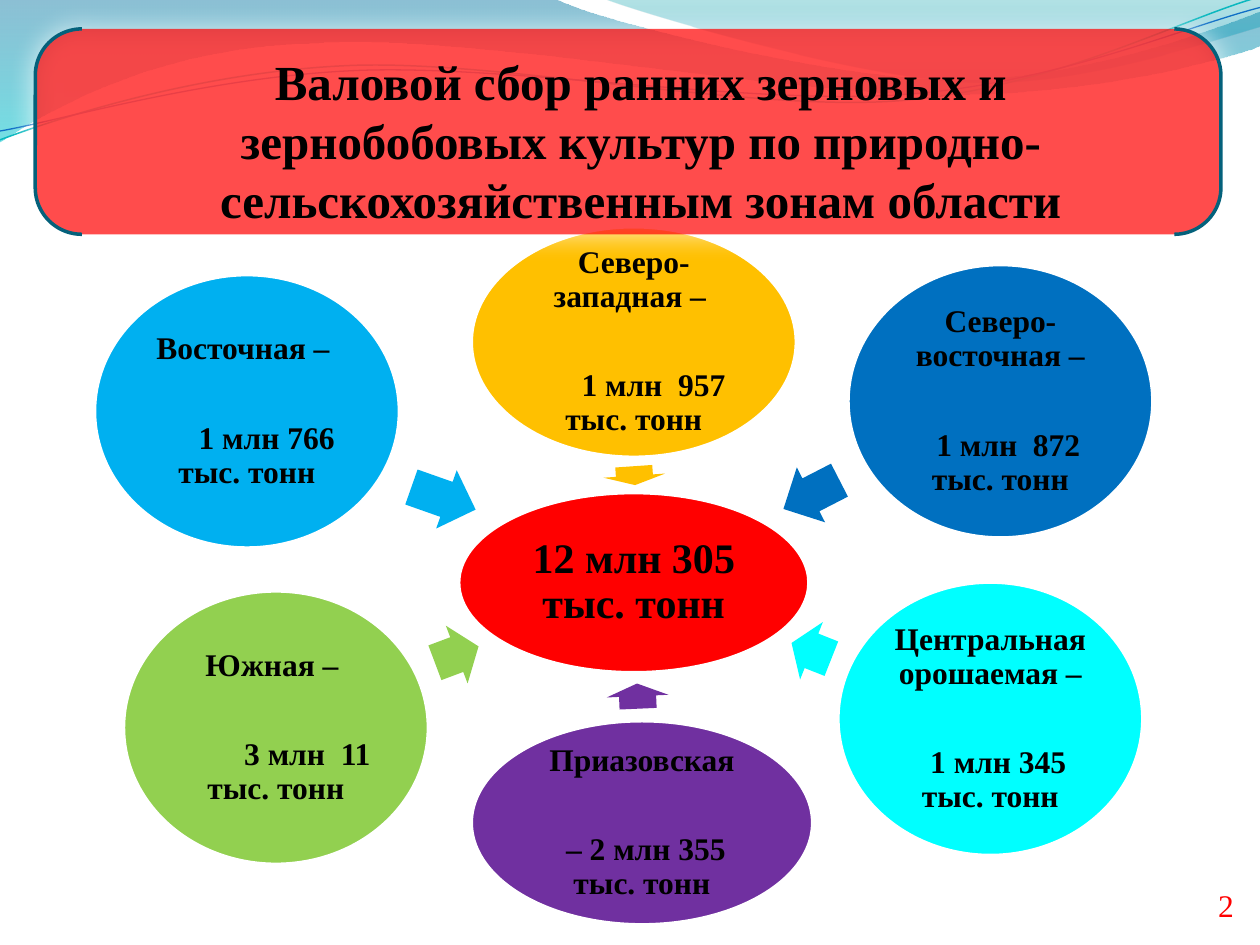
"""Build the slide on gross grain harvest by natural farming zone."""
from dataclasses import dataclass
from math import cos, radians, sin

from lxml.etree import SubElement
from pptx import Presentation
from pptx.dml.color import RGBColor
from pptx.enum.shapes import MSO_SHAPE
from pptx.enum.text import MSO_ANCHOR, MSO_AUTO_SIZE, PP_ALIGN
from pptx.oxml import parse_xml
from pptx.oxml.ns import nsdecls, qn
from pptx.util import Inches, Pt


@dataclass(frozen=True)
class Theme:
    """Colours, font and type sizes of the slide."""
    font: str = "Times New Roman"
    text: str = "000000"
    white: str = "FFFFFF"
    red: str = "FF0000"
    frame: str = "04617B"
    teal_line: str = "0AB8BF"
    blue_line: str = "0F6FC6"
    title: int = 28
    total: int = 24
    label: int = 18


THEME = Theme()
ZONE_GAP = 31.5
SPACE_WIDTH = 4.5
CURVE_TILT = 2.7
TITLE = ("Валовой сбор ранних зерновых и зернобобовых культур "
         "по природно-сельскохозяйственным зонам области")

ZONES = [
    ("Северо-западная – ", "1 млн  957 тыс. тонн", 5, "FFC000",
     (3.74, 1.8, 2.58, 1.83), (4.96, 3.53, 0.15, 0.49), 86.1),
    ("Северо-восточная –", "1 млн  872 тыс. тонн", 2, "0070C0",
     (6.73, 2.1, 2.42, 2.17), (6.19, 3.68, 0.5, 0.49), 152.8),
    ("Центральная орошаемая –", "1 млн 345 тыс. тонн", 2, "00FFFF",
     (6.65, 4.62, 2.42, 2.17), (6.27, 4.92, 0.34, 0.49), 201.6),
    ("Приазовская", "– 2 млн 355 тыс. тонн", 1, "7030A0",
     (3.74, 5.72, 2.71, 1.62), (4.96, 5.28, 0.2, 0.49), 267.5),
    ("Южная – ", "3 млн  11 тыс. тонн", 8, "92D050",
     (0.98, 4.69, 2.42, 2.17), (3.44, 4.95, 0.37, 0.49), 339.4),
    ("Восточная – ", "1 млн 766 тыс. тонн", 5, "00B0F0",
     (0.75, 2.18, 2.42, 2.17), (3.25, 3.71, 0.54, 0.49), 19.4),
]

WIDE_WAVE = [
    (0, 0), (4.4, -0.01), (4.76, 0.17, 6.64, 0.63, 7.58, 0.63),
    (8.53, 0.63, 9.58, 0.26, 10, 0.09), (10.01, 0.36),
    (9.83, 0.44, 8.7, 0.76, 7.46, 0.75), (6.22, 0.75, 3.82, 0.28, 2.57, 0.34),
    (1.29, 0.36, 0.46, 0.83, -0.01, 1.13)]
RIGHT_WAVE = [
    (4.79, -0.01), (5.09, 0.11, 6.82, 0.62, 7.69, 0.65),
    (8.56, 0.69, 9.61, 0.32, 10, 0.21), (10, 0)]
TEAL_CURVE = [
    (0, 1.11), (0.48, 0.93, 1.58, 0.57, 2.77, 0.52),
    (3.95, 0.47, 5.93, 0.89, 7.13, 0.8), (8.33, 0.71, 9.38, 0.15, 9.98, -0.02)]
BLUE_CURVE = [
    (0, 1.04), (0.47, 0.96, 1.64, 0.61, 2.83, 0.56),
    (4.03, 0.51, 5.97, 0.84, 7.17, 0.75), (8.36, 0.67, 9.41, 0.21, 10, 0.06)]


def rgb(color):
    """Turn a hex string into a colour."""
    return RGBColor.from_string(color)


def turn(segments, center, angle):
    """Turn all points of an outline clockwise about a center."""
    cx, cy = center
    c, n = cos(radians(angle)), sin(radians(angle))
    return [[v for x, y in zip(seg[::2], seg[1::2])
             for v in (cx + (x - cx) * c - (y - cy) * n,
                       cy + (x - cx) * n + (y - cy) * c)]
            for seg in segments]


def add_outline(s, segments, close):
    """Add a freeform of lines and cubic curves without shadow."""
    points = [(Inches(x), Inches(y)) for seg in segments
              for x, y in zip(seg[::2], seg[1::2])]
    builder = s.shapes.build_freeform(*points[0], scale=1.0)
    builder.add_line_segments(points[1:], close=close)
    sp = builder.convert_to_shape()
    sp.shadow.inherit = False
    lines = iter(list(sp.element.iter(qn("a:lnTo"))))
    for seg in segments[1:]:
        first = next(lines)
        if len(seg) == 6:
            first.tag = qn("a:cubicBezTo")
            for _ in range(2):
                extra = next(lines)
                first.append(extra[0])
                extra.getparent().remove(extra)
    return sp


def add_wave(s, segments, stops):
    """Add a wave with a translucent vertical gradient."""
    sp = add_outline(s, segments, True)
    sp.line.fill.background()
    stop_xml = "".join(
        f'<a:gs pos="{pos * 1000}"><a:srgbClr val="{color}">'
        f'<a:alpha val="{alpha * 1000}"/></a:srgbClr></a:gs>'
        for pos, color, alpha in stops)
    geometry = sp.element.spPr.find(qn("a:custGeom"))
    geometry.addnext(parse_xml(
        f'<a:gradFill {nsdecls("a")}><a:gsLst>{stop_xml}</a:gsLst>'
        '<a:lin ang="5400000" scaled="0"/></a:gradFill>'))


def add_curve(s, segments, center, color, width):
    """Add a thin open curve, tilted about its center."""
    sp = add_outline(s, turn(segments, center, CURVE_TILT), False)
    sp.rotation = 360 - CURVE_TILT
    sp.fill.background()
    sp.line.color.rgb = rgb(color)
    sp.line.width = Pt(width)


def add_preset(s, kind, box, color, line=None):
    """Add a filled preset shape with an optional outline."""
    sp = s.shapes.add_shape(kind, *map(Inches, box))
    sp.shadow.inherit = False
    sp.fill.solid()
    sp.fill.fore_color.rgb = rgb(color)
    if line:
        sp.line.color.rgb = rgb(line)
        sp.line.width = Pt(2)
    else:
        sp.line.fill.background()
    return sp


def style(p, size, color=THEME.text, bold=True, align=PP_ALIGN.CENTER):
    """Set the type and alignment of a paragraph."""
    p.alignment = align
    p.font.name = THEME.font
    p.font.size = Pt(size)
    p.font.bold = bold
    p.font.color.rgb = rgb(color)


def add_ellipse(s, box, color, lines, size, indent=0):
    """Add an ellipse whose last line is set apart and indented."""
    sp = add_preset(s, MSO_SHAPE.OVAL, box, color, THEME.white)
    tf = sp.text_frame
    tf.word_wrap = True
    tf.vertical_anchor = MSO_ANCHOR.MIDDLE
    tf.margin_left = tf.margin_right = tf.margin_top = tf.margin_bottom = Inches(0.03)
    tf.text = "\n".join(lines)
    for p in tf.paragraphs:
        style(p, size)
        p.line_spacing = 0.9
    for p in tf.paragraphs[1:]:
        p.space_before = Pt(ZONE_GAP)
        p._p.get_or_add_pPr().set("indent", str(Pt(indent * SPACE_WIDTH)))


def add_arrow(s, box, color, angle):
    """Add a block arrow turned towards the total."""
    sp = add_preset(s, MSO_SHAPE.RIGHT_ARROW, box, color)
    sp.adjustments[0], sp.adjustments[1] = 0.6, 0.5
    sp.rotation = angle


def add_title(s):
    """Add the bracketed panel and place the title on it."""
    panel = add_preset(s, MSO_SHAPE.DOUBLE_BRACKET, (0.28, 0.23, 9.41, 1.63),
                       THEME.red, THEME.frame)
    panel.adjustments[0] = 0.227
    sp_pr = panel.element.spPr
    SubElement(sp_pr.find(qn("a:solidFill"))[0], qn("a:alpha"), val="70000")
    glow = SubElement(sp_pr.find(qn("a:effectLst")), qn("a:outerShdw"),
                      blurRad=str(Pt(15)), dist="0", dir="2700000", rotWithShape="0")
    SubElement(glow, qn("a:srgbClr"), val=THEME.white)
    title = s.shapes.title
    panel.element.addnext(title.element)
    title.left, title.top, title.width, title.height = map(Inches, (0.91, 0.36, 8.35, 1.51))
    tf = title.text_frame
    tf.text = TITLE
    tf.word_wrap = True
    tf.auto_size = MSO_AUTO_SIZE.NONE
    tf.vertical_anchor = MSO_ANCHOR.TOP
    style(tf.paragraphs[0], THEME.title)


def add_page_number(s, number):
    """Add the page number in the lower right corner."""
    tf = s.shapes.add_textbox(*map(Inches, (9.57, 6.98, 0.31, 0.4))).text_frame
    tf.word_wrap = True
    tf.text = number
    style(tf.paragraphs[0], THEME.label, THEME.red, False, PP_ALIGN.LEFT)


def main():
    """Build and save the slide."""
    prs = Presentation()
    prs.slide_width, prs.slide_height = Inches(10), Inches(7.5)
    s = prs.slides.add_slide(prs.slide_layouts[5])
    add_wave(s, WIDE_WAVE, [(0, "0074A1", 45), (100, "00C6CF", 55)])
    add_wave(s, RIGHT_WAVE, [(0, "00A1A9", 30), (80, "008BBF", 45)])
    add_curve(s, TEAL_CURVE, (4.99, 0.58), THEME.teal_line, 0.85)
    add_curve(s, BLUE_CURVE, (5, 0.59), THEME.blue_line, 0.75)
    add_ellipse(s, (3.64, 3.91, 2.78, 1.43), THEME.red, ["12 млн 305 тыс. тонн"], THEME.total)
    for name, harvest, indent, color, box, arrow_box, angle in ZONES:
        add_arrow(s, arrow_box, color, angle)
        add_ellipse(s, box, color, [name, harvest], THEME.label, indent)
    add_title(s)
    add_page_number(s, "2")
    prs.save("out.pptx")


if __name__ == "__main__":
    main()
